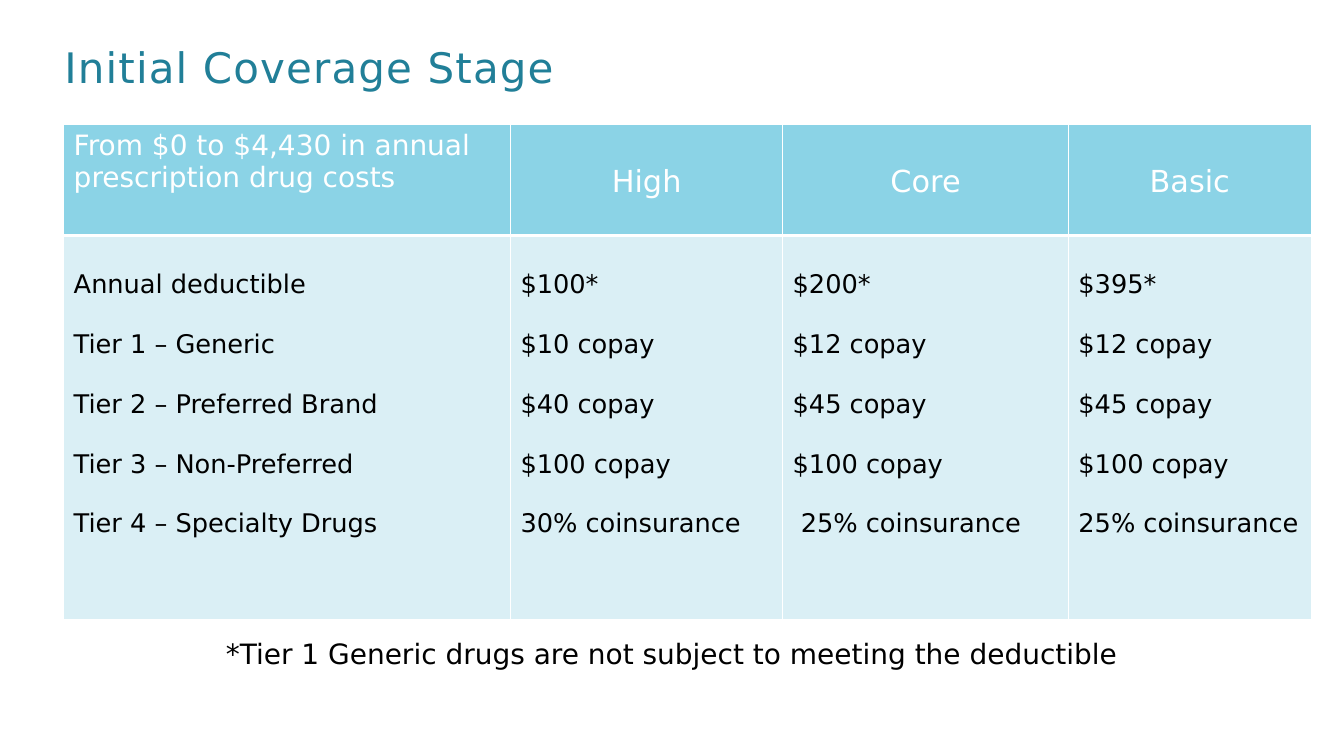
from lxml import etree
from pptx import Presentation
from pptx.dml.color import RGBColor
from pptx.enum.text import MSO_ANCHOR, PP_ALIGN
from pptx.oxml.ns import qn
from pptx.util import Cm, Pt

LEFT, CENTER = PP_ALIGN.LEFT, PP_ALIGN.CENTER
TOP, MIDDLE = MSO_ANCHOR.TOP, MSO_ANCHOR.MIDDLE

FONT = "DejaVu Sans"
COLORS = {"title": "217F98", "head": "8BD3E6", "body": "DAEFF5",
          "white": "FFFFFF", "black": "000000"}

HEADS = ["From $0 to $4,430 in annual prescription drug costs",
         "High", "Core", "Basic"]
PLANS = [
    ["Annual deductible", "Tier 1 – Generic", "Tier 2 – Preferred Brand",
     "Tier 3 – Non-Preferred", "Tier 4 – Specialty Drugs"],
    ["$100*", "$10 copay", "$40 copay", "$100 copay", "30% coinsurance"],
    ["$200*", "$12 copay", "$45 copay", "$100 copay", " 25% coinsurance"],
    ["$395*", "$12 copay", "$45 copay", "$100 copay", "25% coinsurance"],
]
WIDTHS = [13.51, 8.23, 8.64, 7.34]
HEIGHTS = [3.35, 11.63]
GAP = 25.6  # points between the lines of a plan


def color(name):
    return RGBColor.from_string(COLORS[name])


def write(frame, lines, size, ink, align=LEFT, gap=0):
    """Fill a text frame with one paragraph per line."""
    for i, line in enumerate(lines):
        para = frame.paragraphs[0] if i == 0 else frame.add_paragraph()
        para.alignment = align
        if i and gap:
            para.space_before = Pt(gap)
        run = para.add_run()
        run.text = line
        for key, value in {"name": FONT, "size": Pt(size)}.items():
            setattr(run.font, key, value)
        run.font.color.rgb = color(ink)


def add_text(slide, box, line, size, ink, align=LEFT, anchor=TOP):
    frame = slide.shapes.add_textbox(*map(Cm, box)).text_frame
    frame.word_wrap = True
    frame.vertical_anchor = anchor
    write(frame, [line], size, ink, align)
    return frame.paragraphs[0]


def add_edges(cell, edges):
    """Draw white cell borders; edges maps a side to a width in points."""
    props = cell._tc.get_or_add_tcPr()
    for side, width in edges.items():
        line = etree.SubElement(props, qn(f"a:ln{side}"), w=str(Pt(width)))
        fill = etree.SubElement(line, qn("a:solidFill"))
        etree.SubElement(fill, qn("a:srgbClr"), val=COLORS["white"])


def style_cell(cell, fill, edges, top):
    add_edges(cell, edges)
    cell.fill.solid()
    cell.fill.fore_color.rgb = color(fill)
    margins = {"margin_left": 0.3, "margin_right": 0.3,
               "margin_top": top, "margin_bottom": 0.15}
    for key, value in margins.items():
        setattr(cell, key, Cm(value))


def add_plans(slide):
    box = (1.93, 3.76, sum(WIDTHS), sum(HEIGHTS))
    table = slide.shapes.add_table(
        len(HEIGHTS), len(WIDTHS), *map(Cm, box)).table
    for row, height in zip(table.rows, HEIGHTS):
        row.height = Cm(height)
    for col, width in enumerate(WIDTHS):
        table.columns[col].width = Cm(width)

        # Header cell: the plan names sit lower than the first label
        head = table.cell(0, col)
        style_cell(head, "head", {"L": 1, "R": 1, "T": 1, "B": 3},
                   1.22 if col else 0.15)
        write(head.text_frame, [HEADS[col]], 26 if col else 24, "white",
              CENTER if col else LEFT)

        # Body cell: one line per tier
        body = table.cell(1, col)
        style_cell(body, "body", {"L": 1, "R": 1, "T": 3, "B": 1}, 1.06)
        write(body.text_frame, PLANS[col], 22, "black", gap=GAP)


def main():
    deck = Presentation()
    deck.slide_width, deck.slide_height = Cm(40.64), Cm(22.86)
    slide = deck.slides.add_slide(deck.slide_layouts[6])

    # Title
    title = add_text(slide, (1.7, 0.43, 34.52, 3.35),
                     "Initial Coverage Stage", 36, "title", anchor=MIDDLE)
    title.line_spacing = 0.9
    title.runs[0].font._element.set("spc", "100")

    # Table of plans
    add_plans(slide)

    # Footnote
    add_text(slide, (3.18, 19.13, 34.26, 1.27),
             "*Tier 1 Generic drugs are not subject to meeting the deductible",
             24, "black", CENTER)

    deck.save("out.pptx")


if __name__ == "__main__":
    main()
